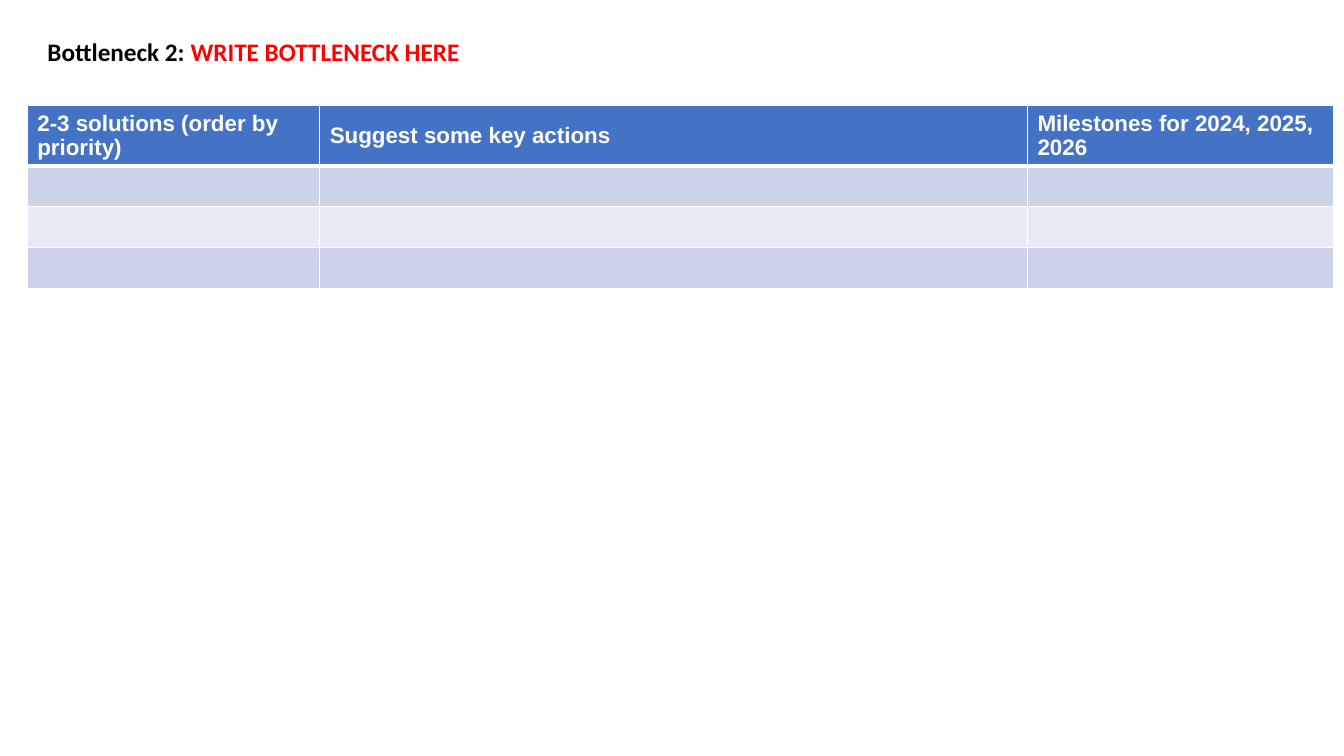
from dataclasses import dataclass

from lxml import etree
from pptx import Presentation
from pptx import util as u
from pptx.dml.color import RGBColor
from pptx.enum import text
from pptx.oxml.ns import qn


@dataclass(frozen=True)
class Theme:
    white: str = "FFFFFF"
    black: str = "000000"
    prompt: str = "FF0000"
    header: str = "4472C4"
    bands: tuple = ("CDD4EA", "E8EBF5")
    title_font: str = "Calibri"
    table_font: str = "Arial"
    title_size: int = 18
    table_size: int = 16
    thin_line: int = 1
    thick_line: int = 3


def add_text(paragraph, words, *, font, size, color, bold=False):
    run = paragraph.add_run()
    run.text = words
    run.font.name = font
    run.font.size = u.Pt(size)
    run.font.bold = bold
    run.font.color.rgb = RGBColor.from_string(color)


def set_borders(cell, color, **widths):
    """Draw cell borders; must run before the cell fill is set."""
    properties = cell._tc.get_or_add_tcPr()
    for side, width in widths.items():
        line = etree.SubElement(properties, qn(f"a:ln{side}"), w=str(u.Pt(width)))
        fill = etree.SubElement(line, qn("a:solidFill"))
        etree.SubElement(fill, qn("a:srgbClr"), val=color)


class SlideBuilder:
    def __init__(self, presentation, theme):
        self.theme = theme
        self.width = presentation.slide_width
        self.height = presentation.slide_height
        self.slide = presentation.slides.add_slide(presentation.slide_layouts[5])

    def across(self, share):
        return round(self.width * share / 100)

    def down(self, share):
        return round(self.height * share / 100)

    def title(self, parts, left, top, width, height):
        shape = self.slide.shapes.title
        shape.left, shape.top = self.across(left), self.down(top)
        shape.width, shape.height = self.across(width), self.down(height)
        frame = shape.text_frame
        frame.word_wrap = True
        frame.auto_size = text.MSO_AUTO_SIZE.NONE
        frame.vertical_anchor = text.MSO_ANCHOR.MIDDLE
        paragraph = frame.paragraphs[0]
        paragraph.alignment = text.PP_ALIGN.LEFT
        paragraph.line_spacing = 0.9
        for words, color in parts:
            add_text(paragraph, words, font=self.theme.title_font,
                     size=self.theme.title_size, color=color, bold=True)

    def table(self, headings, body_rows, left, top, columns, row_height):
        theme = self.theme
        rows = body_rows + 1
        table = self.slide.shapes.add_table(
            rows, len(columns), self.across(left), self.down(top),
            self.across(sum(columns)), self.down(row_height * rows)).table
        for column, share in zip(table.columns, columns):
            column.width = self.across(share)

        # Borders and alternating fills
        for index, row in enumerate(table.rows):
            bottom = theme.thin_line if index else theme.thick_line
            top_line = theme.thick_line if index == 1 else theme.thin_line
            color = theme.bands[(index - 1) % 2] if index else theme.header
            for cell in row.cells:
                set_borders(cell, theme.white, L=theme.thin_line,
                            R=theme.thin_line, T=top_line, B=bottom)
                cell.fill.solid()
                cell.fill.fore_color.rgb = RGBColor.from_string(color)

        # Headings
        for cell, words in zip(table.rows[0].cells, headings):
            cell.vertical_anchor = text.MSO_ANCHOR.MIDDLE
            add_text(cell.text_frame.paragraphs[0], words, font=theme.table_font,
                     size=theme.table_size, color=theme.white, bold=True)


def main():
    presentation = Presentation()
    presentation.slide_width = u.Inches(13.33)
    presentation.slide_height = u.Inches(7.5)
    theme = Theme()
    builder = SlideBuilder(presentation, theme)

    # Solutions table
    builder.table(
        ["2-3 solutions (order by priority)", "Suggest some key actions",
         "Milestones for 2024, 2025, 2026"],
        body_rows=3, left=2.03, top=14, columns=(21.76, 52.66, 22.81), row_height=5.4)

    # Bottleneck title
    builder.title(
        [("Bottleneck 2: ", theme.black), ("WRITE BOTTLENECK HERE ", theme.prompt)],
        left=2.78, top=-2.67, width=97.82, height=19.33)

    presentation.save("out.pptx")


if __name__ == "__main__":
    main()
